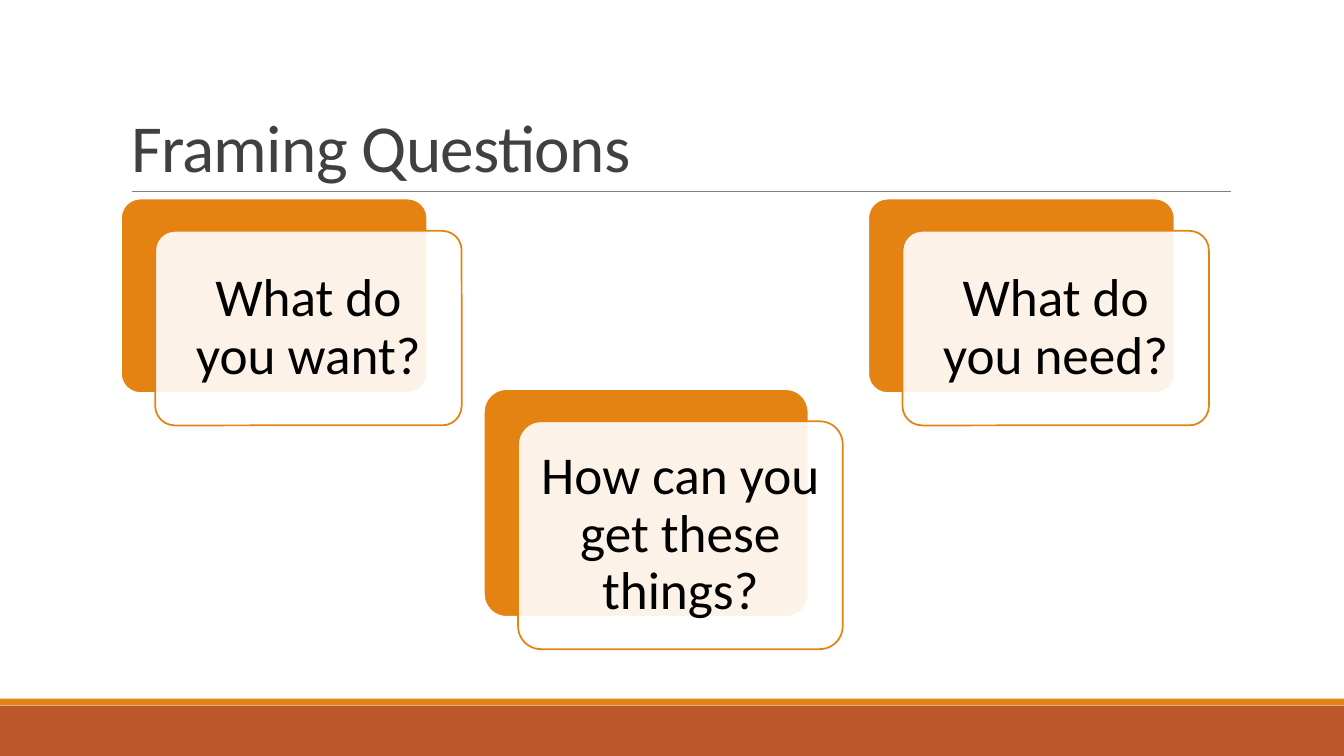
from lxml.etree import SubElement
from pptx import Presentation
from pptx.dml.color import RGBColor
from pptx.enum.shapes import MSO_CONNECTOR, MSO_SHAPE
from pptx.enum.text import MSO_ANCHOR, MSO_AUTO_SIZE, PP_ALIGN
from pptx.oxml.ns import qn
from pptx.util import Inches, Pt

SLIDE_WIDTH, SLIDE_HEIGHT = Inches(13.33), Inches(7.5)
COLUMN, ROW = SLIDE_WIDTH / 100, SLIDE_HEIGHT / 100

ORANGE = RGBColor(0xE4, 0x83, 0x12)
RUST = RGBColor(0xBD, 0x58, 0x2C)
GRAY = RGBColor(0x80, 0x80, 0x80)
CHARCOAL = RGBColor(0x40, 0x40, 0x40)
BLACK = RGBColor(0, 0, 0)
WHITE = RGBColor(0xFF, 0xFF, 0xFF)

CARD_SHIFT = (2.55, 4.27)
QUESTIONS = [
    ("What do you want?", (9, 26.27, 22.8, 25.73)),
    ("What do you need?", (64.6, 26.27, 22.8, 25.73)),
    ("How can you get these things?", (36, 51.47, 24.15, 30.13)),
]


def grid_box(left, top, width, height):
    return [int(n * unit) for n, unit in
            zip((left, top, width, height), (COLUMN, ROW, COLUMN, ROW))]


def write_text(holder, text, size, color, align=PP_ALIGN.LEFT,
               anchor=MSO_ANCHOR.MIDDLE, line_spacing=0.9, inset=None, tracking=0):
    frame = holder.text_frame
    frame.word_wrap = True
    frame.auto_size = MSO_AUTO_SIZE.NONE
    frame.vertical_anchor = anchor
    if inset is not None:
        frame.margin_left = frame.margin_right = inset
        frame.margin_top = frame.margin_bottom = inset
    paragraph = frame.paragraphs[0]
    paragraph.alignment = align
    paragraph.line_spacing = line_spacing
    run = paragraph.add_run()
    run.text = text
    run.font.name = "Calibri"
    run.font.size = Pt(size)
    run.font.color.rgb = color
    if tracking:
        run.font._element.set("spc", str(int(tracking * 100)))


def add_block(slide, preset, box, fill, outline=None, opacity=None):
    block = slide.shapes.add_shape(preset, *grid_box(*box))
    block.shadow.inherit = False
    block.fill.solid()
    block.fill.fore_color.rgb = fill
    if opacity is not None:
        color = block._element.spPr.find(qn("a:solidFill")).find(qn("a:srgbClr"))
        SubElement(color, qn("a:alpha")).set("val", str(opacity * 1000))
    if outline is None:
        block.line.fill.background()
    else:
        block.line.color.rgb = outline
        block.line.width = Pt(1.25)
    return block


def add_rounded(slide, box, fill, outline, opacity=None):
    rounded = add_block(slide, MSO_SHAPE.ROUNDED_RECTANGLE, box, fill, outline, opacity)
    rounded.adjustments[0] = 0.1
    return rounded


def add_question(slide, question, box):
    left, top, width, height = box
    across, down = CARD_SHIFT
    add_rounded(slide, box, ORANGE, WHITE)
    card = add_rounded(slide, (left + across, top + down, width, height),
                       WHITE, ORANGE, opacity=90)
    write_text(card, question, 38, BLACK, align=PP_ALIGN.CENTER, inset=Inches(0.16))


def add_title_rule(slide, left, right, row):
    y = int(row * ROW)
    rule = slide.shapes.add_connector(
        MSO_CONNECTOR.STRAIGHT, int(left * COLUMN), y, int(right * COLUMN), y)
    rule.line.color.rgb = GRAY
    rule.line.width = Pt(0.5)
    SubElement(rule._element.spPr, qn("a:effectLst"))


def place_title(slide, text, box):
    title = slide.shapes.title
    title.left, title.top, title.width, title.height = grid_box(*box)
    write_text(title, text, 48, CHARCOAL, anchor=MSO_ANCHOR.BOTTOM,
               line_spacing=0.85, tracking=-0.5)


def main():
    deck = Presentation()
    deck.slide_width, deck.slide_height = SLIDE_WIDTH, SLIDE_HEIGHT
    slide = deck.slides.add_slide(deck.slide_layouts.get_by_name("Title Only"))
    add_block(slide, MSO_SHAPE.RECTANGLE, (0, 93.33, 100, 6.67), RUST)
    add_block(slide, MSO_SHAPE.RECTANGLE, (0, 92.4, 100, 0.9), ORANGE)
    add_title_rule(slide, 9.83, 91.6, 25.33)
    place_title(slide, "Framing Questions", (9, 4.13, 82.5, 21.2))
    for question, box in QUESTIONS:
        add_question(slide, question, box)
    deck.save("out.pptx")


if __name__ == "__main__":
    main()
